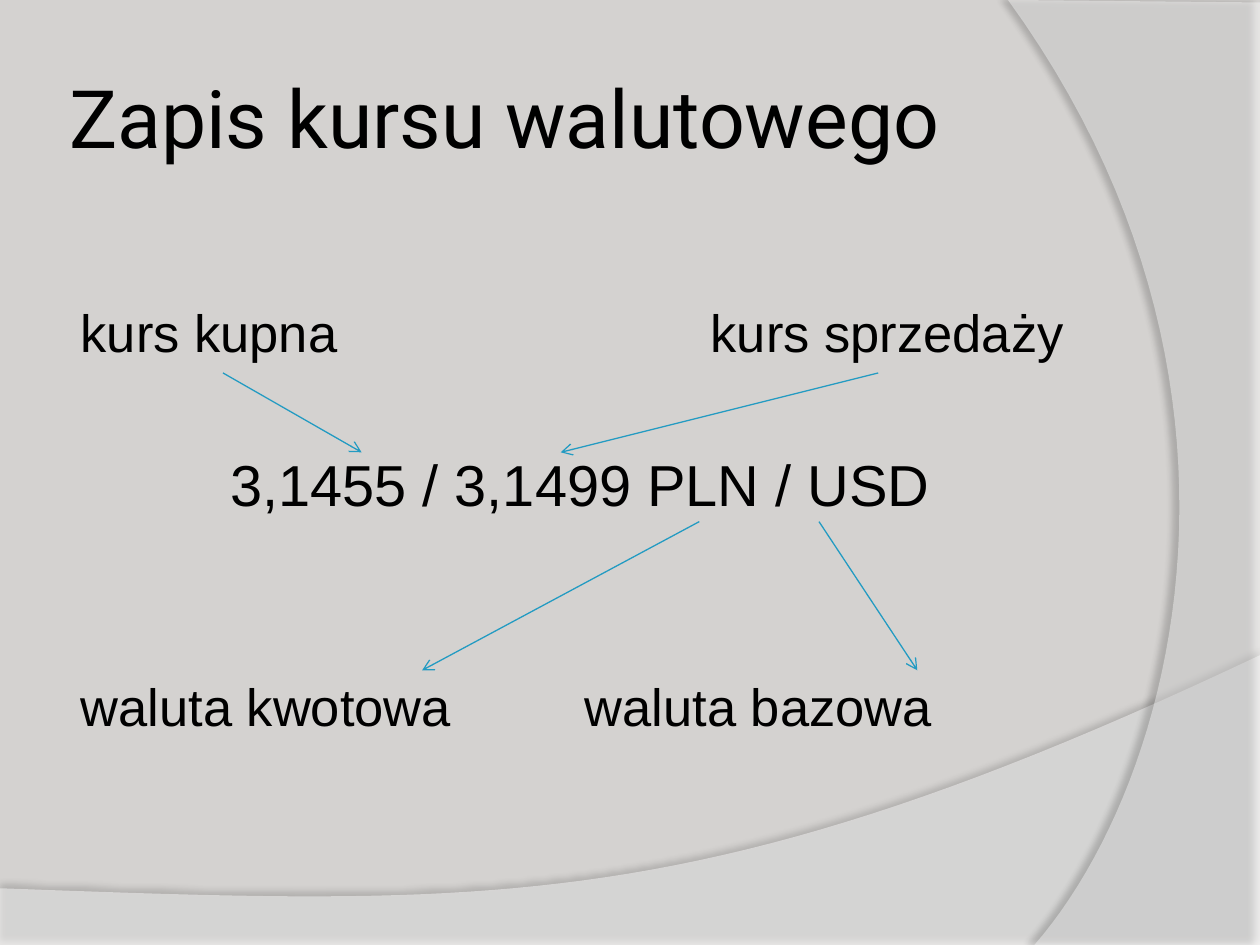
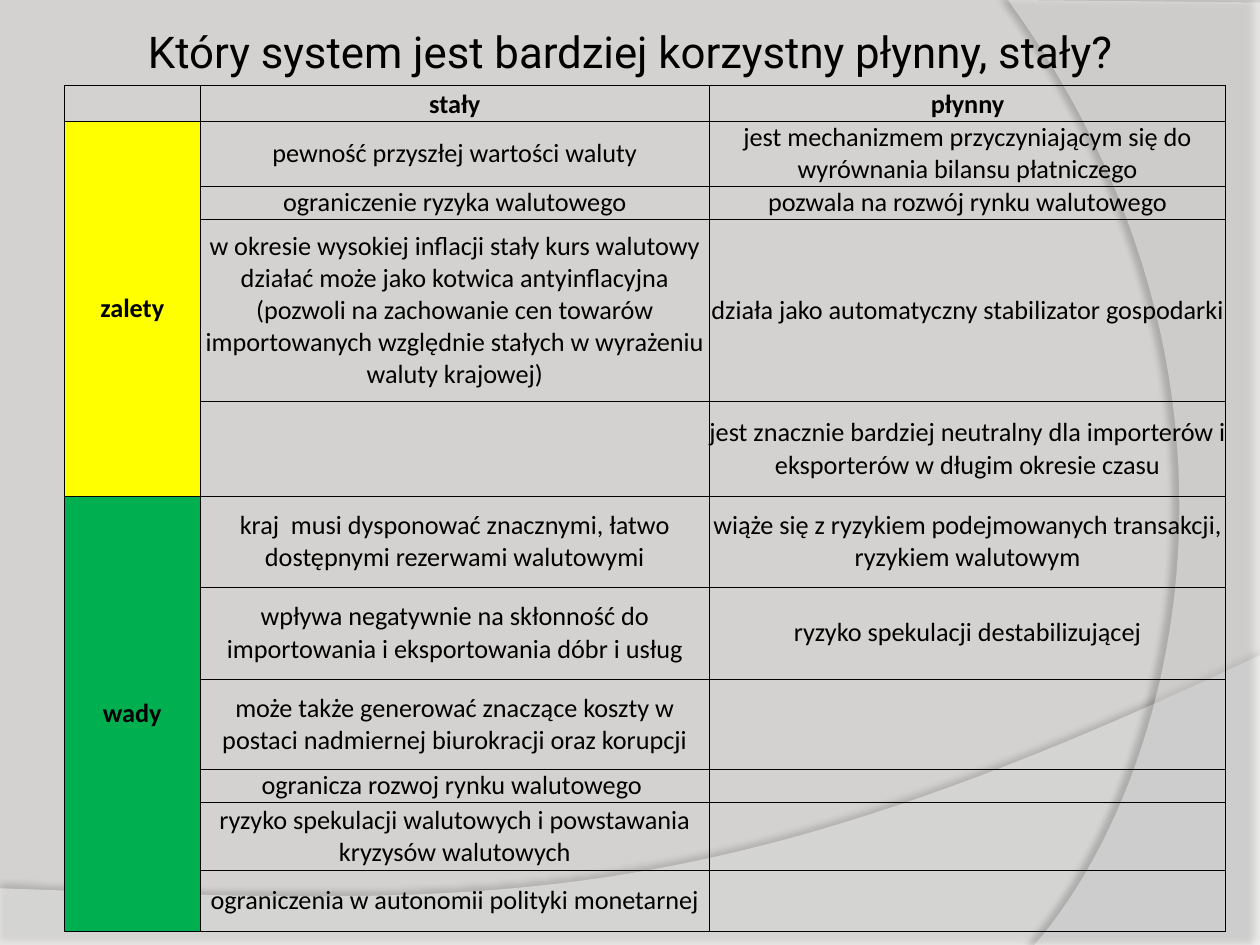
from lxml.etree import SubElement as Sub
from pptx import Presentation
from pptx.dml.color import RGBColor
from pptx.enum.shapes import MSO_CONNECTOR as Link
from pptx.enum.text import MSO_ANCHOR as Anchor, MSO_AUTO_SIZE as Fit, PP_ALIGN as Align
from pptx.oxml.ns import qn
from pptx.util import Inches, Pt

HUES = {"back": "D4D2D0", "wave": "FFFFFF", "shade": "000000", "text": "000000",
        "arrow": "239BC2", "grid": "000000", "pros": "FFFF00", "cons": "00B050"}
INSETS = ("margin_left", "margin_top", "margin_right", "margin_bottom")

# Each wave: straight points, the four points of its curve, then its look.
WAVES = [
    {"points": [(0, 7.05), (0, 7.51), (10, 7.51)],
     "curve": [(10, 5.2), (5.59, 7.29), (3.91, 7.19), (0, 7.05)],
     "alpha": 45, "shade": 35, "dist": 3.5, "angle": 270},
    {"points": [(10, 0.02), (10, 7.5)],
     "curve": [(8.21, 7.5), (9.35, 6.19), (10.18, 3), (8, 0)],
     "alpha": 40, "shade": 45, "dist": 4, "angle": 180},
]

# Text, size, space before, alignment, tab distance
RATES = [
    ("kurs kupna\tkurs sprzedaży", 30, 0, Align.LEFT, 5),
    ("3,1455 / 3,1499 PLN / USD", 33, 49, Align.CENTER, 1),
    ("waluta kwotowa\twaluta bazowa", 30, 89, Align.LEFT, 4),
]
ARROWS = [
    ((1.77, 2.96), (2.87, 3.59)),
    ((6.97, 2.96), (4.45, 3.59)),
    ((6.5, 4.14), (7.28, 5.32)),
    ((5.55, 4.14), (3.35, 5.32)),
]

COLS = [1.08, 4.04, 4.1]
ROWS = [0.28, 0.52, 0.26, 1.45, 0.75, 0.72, 0.73, 0.72, 0.26, 0.54, 0.48]
HEADS = ("", "stały", "płynny")
GROUPS = [
    ("zalety", "pros", [
        ("pewność przyszłej wartości waluty",
         "jest mechanizmem przyczyniającym się do wyrównania bilansu płatniczego"),
        ("ograniczenie ryzyka walutowego", "pozwala na rozwój rynku walutowego"),
        ("w okresie wysokiej inflacji stały kurs walutowy działać może jako kotwica "
         "antyinflacyjna (pozwoli na zachowanie cen towarów importowanych względnie "
         "stałych w wyrażeniu waluty krajowej)",
         "działa jako automatyczny stabilizator gospodarki"),
        ("", "jest znacznie bardziej neutralny dla importerów i eksporterów "
             "w długim okresie czasu"),
    ]),
    ("wady", "cons", [
        ("kraj  musi dysponować znacznymi, łatwo dostępnymi rezerwami walutowymi",
         "wiąże się z ryzykiem podejmowanych transakcji, ryzykiem walutowym"),
        ("wpływa negatywnie na skłonność do importowania i eksportowania dóbr i usług",
         "ryzyko spekulacji destabilizującej"),
        ("może także generować znaczące koszty w postaci nadmiernej biurokracji "
         "oraz korupcji", ""),
        ("ogranicza rozwoj rynku walutowego ", ""),
        ("ryzyko spekulacji walutowych i powstawania kryzysów walutowych", ""),
        ("ograniczenia w autonomii polityki monetarnej", ""),
    ]),
]


def hue(name):
    return RGBColor.from_string(HUES[name])


def apply(target, values):
    for name, value in values.items():
        setattr(target, name, value)


def place(shape, *box):
    apply(shape, dict(zip(("left", "top", "width", "height"), map(Inches, box))))


def write(par, text, size, face, align, bold=False):
    par.alignment = align
    run = par.add_run()
    run.text = text
    apply(run.font, {"size": Pt(size), "name": face, "bold": bold})
    run.font.color.rgb = hue("text")


def bezier(ends, steps=48):
    a, b, c, d = ends
    for t in (i / steps for i in range(steps + 1)):
        u = 1 - t
        yield tuple(u**3 * p + 3 * u * u * t * q + 3 * u * t * t * r + t**3 * s
                    for p, q, r, s in zip(a, b, c, d))


def add_wave(slide, wave):
    dots = [(Inches(x), Inches(y)) for x, y in wave["points"] + list(bezier(wave["curve"]))]
    pen = slide.shapes.build_freeform(*dots[0])
    pen.add_line_segments(dots[1:], close=True)
    shape = pen.convert_to_shape()
    shape.line.fill.background()
    shape.fill.solid()
    shape.fill.fore_color.rgb = hue("wave")
    props = shape.element.spPr
    tint = props.find(qn("a:solidFill")).find(qn("a:srgbClr"))
    Sub(tint, qn("a:alpha"), val=str(wave["alpha"] * 1000))
    shape.shadow.inherit = False
    cast = Sub(props.find(qn("a:effectLst")), qn("a:outerShdw"), blurRad=str(Pt(4)),
               dist=str(Pt(wave["dist"])), dir=str(wave["angle"] * 60000),
               algn="ctr", rotWithShape="0")
    shade = Sub(cast, qn("a:srgbClr"), val=HUES["shade"])
    Sub(shade, qn("a:alpha"), val=str(wave["shade"] * 1000))
    return shape


def dress_master(deck, slide):
    """Set the shared background and move the waves behind the master's placeholders."""
    master = deck.slide_master
    master.background.fill.solid()
    master.background.fill.fore_color.rgb = hue("back")
    for spot, wave in enumerate(WAVES, 2):
        master.shapes.element.insert(spot, add_wave(slide, wave).element)


def add_title(slide, text, box, size, align):
    title = slide.shapes.title
    place(title, *box)
    frame = title.text_frame
    apply(frame, dict.fromkeys(INSETS, Inches(0.05)))
    apply(frame, {"vertical_anchor": Anchor.MIDDLE, "auto_size": Fit.NONE})
    write(frame.paragraphs[0], text, size, "Roboto", align)


def add_rates(slide):
    body = slide.placeholders[1]
    place(body, 0.5, 1.75, 8.17, 4.95)
    frame = body.text_frame
    apply(frame, {"margin_left": Inches(0.14), "margin_top": Inches(0.63),
                  "auto_size": Fit.NONE, "vertical_anchor": Anchor.TOP})
    for i, (text, size, gap, align, tab) in enumerate(RATES):
        par = frame.add_paragraph() if i else frame.paragraphs[0]
        write(par, text, size, "Arial", align)
        par.space_before = Pt(gap)
        props = par._p.get_or_add_pPr()
        for name, value in {"marL": 0, "indent": 0, "defTabSz": Inches(tab)}.items():
            props.set(name, str(value))
        Sub(props, qn("a:buNone"))


def add_arrow(slide, start, end):
    line = slide.shapes.add_connector(Link.STRAIGHT, *map(Inches, start + end))
    line.line.color.rgb = hue("arrow")
    line.line.width = Pt(0.75)
    props = line.element.spPr
    Sub(props.find(qn("a:ln")), qn("a:tailEnd"), type="arrow")
    Sub(props, qn("a:effectLst"))


def frame_cell(cell):
    props = cell._tc.get_or_add_tcPr()
    for side in "LRTB":
        edge = Sub(props, qn("a:ln" + side), w=str(Pt(0.5)))
        Sub(Sub(edge, qn("a:solidFill")), qn("a:srgbClr"), val=HUES["grid"])


def fill_cell(cell, text, bold=False, anchor=Anchor.MIDDLE, tint=None):
    apply(cell, dict.fromkeys(INSETS, 0))
    cell.vertical_anchor = anchor
    par = cell.text_frame.paragraphs[0]
    if text:
        write(par, text, 15, "Calibri", Align.CENTER, bold)
    else:
        Sub(par._p, qn("a:endParaRPr"), sz="1500")
    if tint:
        cell.fill.solid()
        cell.fill.fore_color.rgb = hue(tint)
    else:
        cell.fill.background()


def add_grid(slide):
    box = map(Inches, (0.51, 0.68, sum(COLS), sum(ROWS)))
    grid = slide.shapes.add_table(len(ROWS), len(COLS), *box).table
    apply(grid, {"first_row": False, "horz_banding": False})
    for col, width in zip(grid.columns, COLS):
        col.width = Inches(width)
    for row, height in zip(grid.rows, ROWS):
        row.height = Inches(height)
    for cell in grid.iter_cells():
        frame_cell(cell)
    for c, text in enumerate(HEADS):
        fill_cell(grid.cell(0, c), text, True, Anchor.BOTTOM)
    top = 1
    for name, tint, pairs in GROUPS:
        last = top + len(pairs) - 1
        grid.cell(top, 0).merge(grid.cell(last, 0))
        fill_cell(grid.cell(top, 0), name, True, tint=tint)
        for r, pair in enumerate(pairs, top):
            for c, text in enumerate(pair, 1):
                fill_cell(grid.cell(r, c), text)
        top = last + 1


def main():
    deck = Presentation()
    apply(deck, {"slide_width": Inches(10), "slide_height": Inches(7.5)})
    quote = deck.slides.add_slide(deck.slide_layouts[1])
    dress_master(deck, quote)
    add_title(quote, "Zapis kursu walutowego", (0.5, 0.3, 8.17, 1.25), 46, Align.LEFT)
    add_rates(quote)
    for start, end in ARROWS:
        add_arrow(quote, start, end)

    duel = deck.slides.add_slide(deck.slide_layouts[5])
    add_title(duel, "Który system jest bardziej korzystny płynny, stały?",
              (0.35, 0.13, 9.3, 0.55), 25, Align.CENTER)
    add_grid(duel)
    deck.save("out.pptx")


if __name__ == "__main__":
    main()
